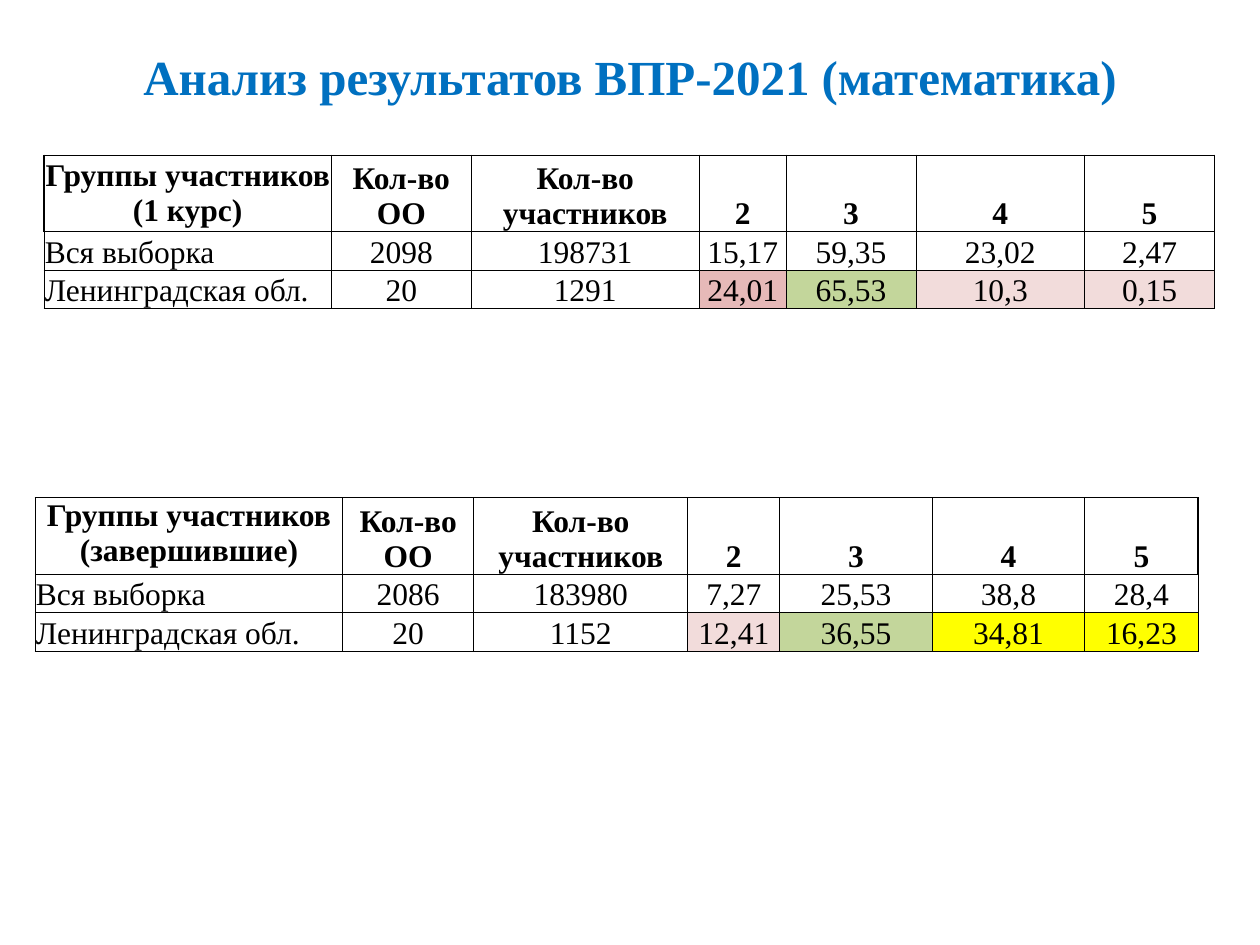
"""Build a slide with two tables of mathematics test results."""
import pptx
import pptx.util
import pptx.dml.color
import pptx.enum.text
import lxml.etree

FONT = "Times New Roman"
MIDDLE = pptx.enum.text.MSO_ANCHOR.MIDDLE
BOTTOM = pptx.enum.text.MSO_ANCHOR.BOTTOM
TOP = pptx.enum.text.MSO_ANCHOR.TOP
CENTER = pptx.enum.text.PP_ALIGN.CENTER
LEFT = pptx.enum.text.PP_ALIGN.LEFT
ROWS = [0.56, 0.28, 0.28]
HEADS = ["Кол-во ОО", "Кол-во участников", "2", "3", "4", "5"]
TABLES = [
    (0.35, 1.23, MIDDLE,
     [2.28, 1.11, 1.81, 0.69, 1.03, 1.34, 1.03],
     [["Группы участников (1 курс)"] + HEADS,
      ["Вся выборка", "2098", "198731", "15,17", "59,35", "23,02", "2,47"],
      ["Ленинградская обл.", "20", "1291", "24,01", "65,53", "10,3", "0,15"]],
     ["E6B9B8", "C3D69B", "F2DCDB", "F2DCDB"]),
    (0.28, 3.95, TOP,
     [2.44, 1.04, 1.7, 0.73, 1.21, 1.21, 0.9],
     [["Группы участников (завершившие)"] + HEADS,
      ["Вся выборка", "2086", "183980", "7,27", "25,53", "38,8", "28,4"],
      ["Ленинградская обл.", "20", "1152", "12,41", "36,55", "34,81", "16,23"]],
     ["F2DCDB", "C3D69B", "FFFF00", "FFFF00"]),
]


def rgb(color):
    return pptx.dml.color.RGBColor.from_string(color)


def add_text(tf, text, size, color, bold, align):
    p = tf.paragraphs[0]
    p.alignment = align
    r = p.add_run()
    r.text = text
    r.font.name, r.font.size, r.font.bold = FONT, pptx.util.Pt(size), bold
    r.font.color.rgb = rgb(color)


prs = pptx.Presentation()
prs.slide_width, prs.slide_height = pptx.util.Inches(10), pptx.util.Inches(7.5)
W, H = prs.slide_width, prs.slide_height
s = prs.slides.add_slide(prs.slide_layouts[6])

sp = s.shapes.add_textbox(int(W * 0.05), int(H * 0.04), int(W * 0.9), int(H * 0.08))
tf = sp.text_frame
tf.word_wrap = True
tf.vertical_anchor = MIDDLE
add_text(tf, "Анализ результатов ВПР-2021 (математика)", 28, "0070C0", True, CENTER)

for left, top, first_anchor, cols, data, fills in TABLES:
    box = [pptx.util.Inches(v) for v in (left, top, sum(cols), sum(ROWS))]
    tbl = s.shapes.add_table(len(ROWS), len(cols), *box).table
    tbl.horz_banding = False
    for col, width in zip(tbl.columns, cols):
        col.width = pptx.util.Inches(width)
    for row, height in zip(tbl.rows, ROWS):
        row.height = pptx.util.Inches(height)
    for i, values in enumerate(data):
        for j, value in enumerate(values):
            cell = tbl.cell(i, j)
            cell.margin_left = cell.margin_right = cell.margin_top = pptx.util.Pt(0.4)
            cell.margin_bottom = pptx.util.Pt(0.1)
            cell.vertical_anchor = first_anchor if i == j == 0 else BOTTOM
            align = LEFT if i and j == 0 else CENTER
            add_text(cell.text_frame, value, 18, "000000", i == 0, align)
            if i == 2 and j > 2:
                cell.fill.solid()
                cell.fill.fore_color.rgb = rgb(fills[j - 3])
            else:
                cell.fill.background()
            thick = {(0, 0): "lnL", (0, len(cols) - 1): "lnR"}.get((i, j))
            tcPr = cell._tc.get_or_add_tcPr()
            for k, side in enumerate(["lnL", "lnR", "lnT", "lnB"]):
                width = pptx.util.Pt(1 if side == thick else 0.5)
                tcPr.insert(k, lxml.etree.fromstring(
                    f'<a:{side} xmlns:a="http://schemas.openxmlformats.org/drawingml/2006/main"'
                    f' w="{int(width)}"><a:solidFill><a:srgbClr val="000000"/>'
                    f'</a:solidFill></a:{side}>'))

prs.save("out.pptx")
